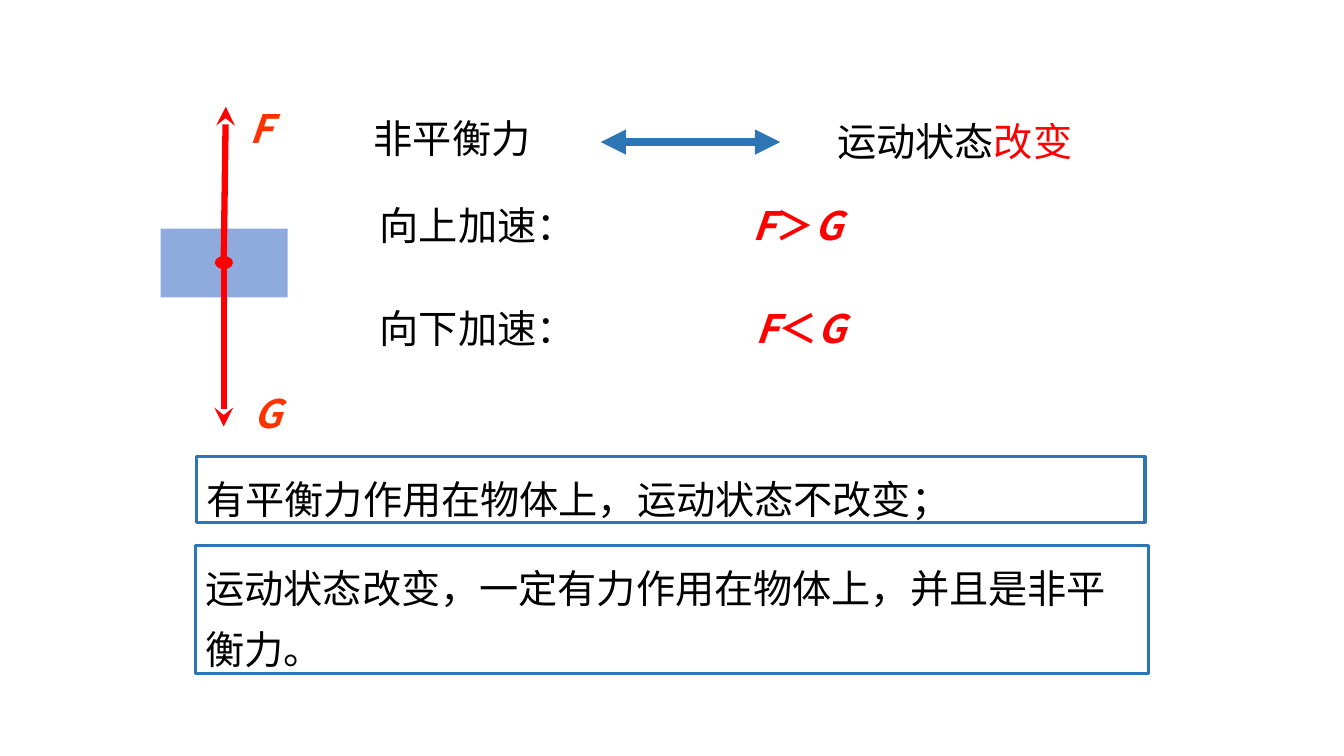
"""Build a slide on unbalanced forces and changes of motion."""
from dataclasses import dataclass
from typing import Any

from lxml.etree import SubElement as Sub
from pptx import Presentation as Deck
from pptx.dml.color import RGBColor as Rgb
from pptx.enum.shapes import MSO_CONNECTOR as Conn, MSO_SHAPE as Kind
from pptx.enum.text import MSO_ANCHOR as Anchor, MSO_AUTO_SIZE as Fit, PP_ALIGN as Align
from pptx.oxml.ns import qn
from pptx.util import Pt

FACE = "Noto Sans CJK SC"
HUES = {"ink": "000000", "red": "FF0000", "label": "FF3300",
        "blue": "2E75B6", "block": "8FAADC", "white": "FFFFFF"}


@dataclass
class Run:
    """A stretch of text in one style."""
    text: str
    hue: str = "ink"
    bold: bool | None = None
    slant: bool | None = None


@dataclass
class Box:
    """A text box or, when framed, an outlined note."""
    left: float
    top: float
    width: float
    height: float
    runs: list[Run]
    wrap: bool = True
    framed: bool = False


@dataclass
class Arrow:
    """A straight arrow with its head styles."""
    start: tuple[float, float]
    end: tuple[float, float]
    hue: str
    weight: float
    heads: dict[str, str]


@dataclass
class Solid:
    """A filled shape without an outline."""
    kind: Any
    left: float
    top: float
    width: float
    height: float
    hue: str


def rgb(hue: str) -> Rgb:
    """Look up a named colour."""
    return Rgb.from_string(HUES[hue])


def apply(item: Any, form: dict[str, Any]) -> None:
    """Set attributes from a dict of format values."""
    for name, value in form.items():
        setattr(item, name, value)


def force(text: str, hue: str = "red") -> Run:
    """Make a bold slanted force symbol."""
    return Run(text, hue, True, True)


def versus(sign: str) -> list[Run]:
    """Compare the two forces with a sign."""
    return [force("F"), Run(sign, "red", True, False), force("G")]


def paint(shape: Any, hue: str) -> None:
    """Fill a shape and drop its shadow."""
    shape.shadow.inherit = False
    shape.fill.solid()
    shape.fill.fore_color.rgb = rgb(hue)


def draw_box(slide: Any, box: Box) -> None:
    """Draw a box and its text."""
    area = [Pt(n) for n in (box.left, box.top, box.width, box.height)]
    if box.framed:
        shape = slide.shapes.add_shape(Kind.RECTANGLE, *area)
        paint(shape, "white")
        shape.line.color.rgb = rgb("blue")
        shape.line.width = Pt(2.25)
    else:
        shape = slide.shapes.add_textbox(*area)
    frame = shape.text_frame
    apply(frame, {"word_wrap": box.wrap, "vertical_anchor": Anchor.TOP,
                  "auto_size": Fit.SHAPE_TO_FIT_TEXT})
    para = frame.paragraphs[0]
    apply(para, {"alignment": Align.LEFT, "line_spacing": 1.3 if box.framed else None})
    for part in box.runs:
        run = para.add_run()
        run.text = part.text
        apply(run.font, {"name": FACE, "size": Pt(28), "bold": part.bold, "italic": part.slant})
        run.font.color.rgb = rgb(part.hue)
        Sub(run.font._element, qn("a:ea"), typeface=FACE)


def draw_arrow(slide: Any, arrow: Arrow) -> None:
    """Draw an arrow with its heads."""
    ends = [Pt(n) for n in (*arrow.start, *arrow.end)]
    link = slide.shapes.add_connector(Conn.STRAIGHT, *ends)
    link.line.color.rgb = rgb(arrow.hue)
    link.line.width = Pt(arrow.weight)
    for tag, head in arrow.heads.items():
        Sub(link.line._get_or_add_ln(), qn(f"a:{tag}"), type=head)
    Sub(link._element.spPr, qn("a:effectLst"))


def draw_solid(slide: Any, solid: Solid) -> None:
    """Draw a filled shape."""
    area = [Pt(n) for n in (solid.left, solid.top, solid.width, solid.height)]
    shape = slide.shapes.add_shape(solid.kind, *area)
    paint(shape, solid.hue)
    shape.line.fill.background()


STEALTH = {"tailEnd": "stealth"}
BOTH = {"headEnd": "triangle", "tailEnd": "triangle"}
LINE = 41
UP, DOWN = 140.4, 213.8

ITEMS = [
    Box(260, 77.8, 175, LINE, [Run("非平衡力")]),
    Arrow((429.1, 101.5), (557.3, 101.5), "blue", 6, BOTH),
    Box(591.1, 79.9, 184.3, LINE, [Run("运动状态"), Run("改变", "red")], wrap=False),
    Solid(Kind.RECTANGLE, 114.8, 163.4, 90.7, 49, "block"),
    Arrow((159.8, 187.5), (161.3, 76.3), "red", 4.5, STEALTH),
    Box(171.4, 71.3, 64.8, LINE, [force("F", "label")]),
    Arrow((159.8, 187.5), (159.8, 304.6), "red", 4.5, STEALTH),
    Box(174.2, 274.3, 45.4, LINE, [force("G", "label")]),
    Solid(Kind.OVAL, 153.4, 182.9, 13, 9.4, "red"),
    Box(264.2, UP, 187.2, LINE, [Run("向上加速：")]),
    Box(264.2, DOWN, 187.2, LINE, [Run("向下加速：")]),
    Box(530.6, UP, 196.6, LINE, versus("＞")),
    Box(139.7, 389.5, 680.4, 91.4,
        [Run("运动状态改变，一定有力作用在物体上，并且是非平衡力。")], framed=True),
    Box(140.4, 326.2, 677.5, 46.8,
        [Run("有平衡力作用在物体上，运动状态不改变；")], framed=True),
    Box(532.8, DOWN, 221, LINE, versus("＜")),
]


def main() -> None:
    """Draw every item and save the deck."""
    deck = Deck()
    apply(deck, {"slide_width": Pt(960), "slide_height": Pt(540)})
    slide = deck.slides.add_slide(deck.slide_layouts[6])
    tools = {Box: draw_box, Arrow: draw_arrow, Solid: draw_solid}
    for item in ITEMS:
        tools[type(item)](slide, item)
    deck.save("out.pptx")


if __name__ == "__main__":
    main()
